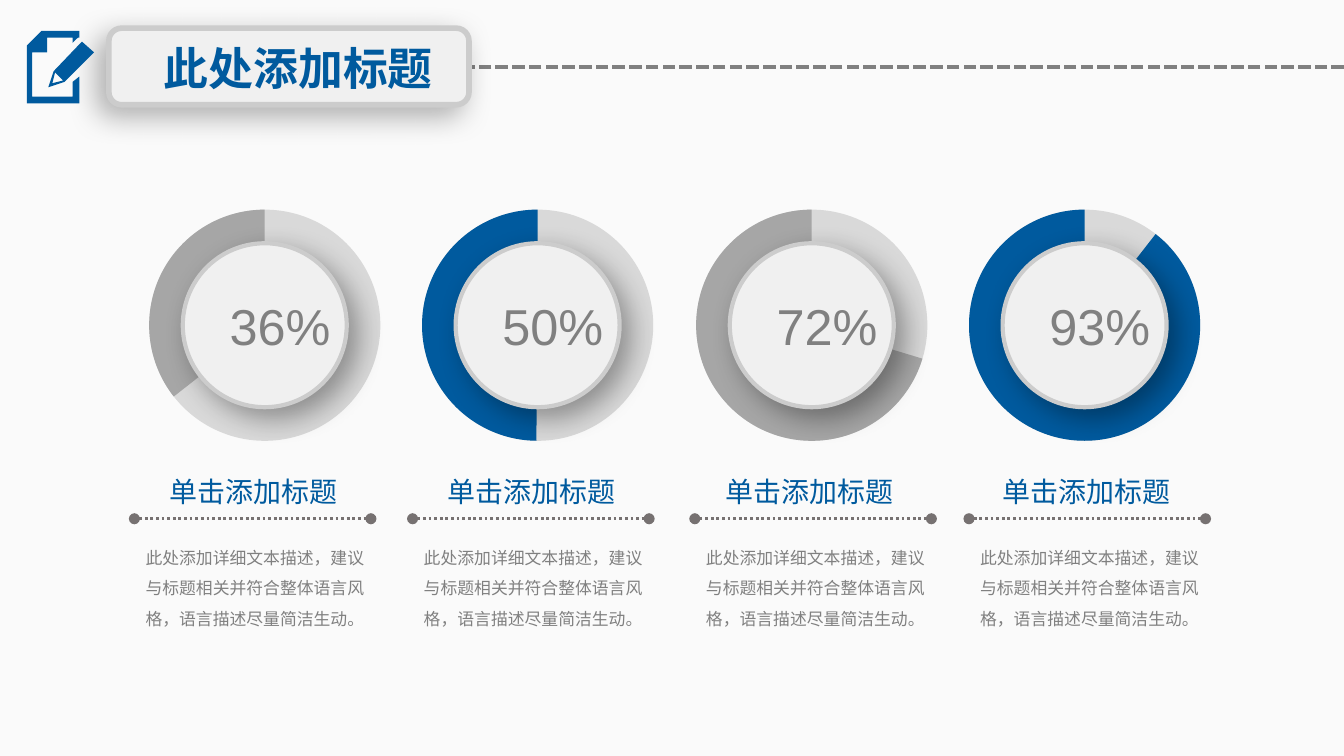
from lxml import etree
from pptx import Presentation
from pptx.dml.color import RGBColor
from pptx.enum.dml import MSO_LINE
from pptx.enum.shapes import MSO_CONNECTOR, MSO_SHAPE
from pptx.enum.text import MSO_ANCHOR, PP_ALIGN
from pptx.oxml import parse_xml
from pptx.oxml.ns import nsdecls, qn
from pptx.util import Inches, Pt

STRAIGHT = MSO_CONNECTOR.STRAIGHT
OVAL = MSO_SHAPE.OVAL
PIE = MSO_SHAPE.PIE
ROUNDED = MSO_SHAPE.ROUNDED_RECTANGLE
DASH, DOT = MSO_LINE.SQUARE_DOT, MSO_LINE.ROUND_DOT
LEFT, CENTER = PP_ALIGN.LEFT, PP_ALIGN.CENTER
TOP = MSO_ANCHOR.TOP

BLUE = RGBColor(0x00, 0x5A, 0x9E)
GRAY = RGBColor(0x80, 0x80, 0x80)
MID_GRAY = RGBColor(0xA6, 0xA6, 0xA6)
RING_GRAY = RGBColor(0xD9, 0xD9, 0xD9)
RULE_GRAY = RGBColor(0x76, 0x71, 0x71)
EDGE = RGBColor(0xCC, 0xCC, 0xCC)
PANEL = RGBColor(0xF0, 0xF0, 0xF0)
PAGE_TOP = RGBColor(0xFA, 0xFA, 0xFA)
PAGE_BOTTOM = RGBColor(0xFC, 0xFC, 0xFC)

DETAIL = "此处添加详细文本描述，建议与标题相关并符合整体语言风格，语言描述尽量简洁生动。"
ITEMS = [
    ("36%", 85.14, MID_GRAY, 1.11, 1.16, 1.0),
    ("50%", 54.38, BLUE, 3.14, 3.23, 3.07),
    ("72%", 10.09, MID_GRAY, 5.18, 5.3, 5.17),
    ("93%", 184.76, BLUE, 7.21, 7.36, 7.21),
]
SHEET = [
    [(54, 72), (24, 72), (24, 39), (35, 39), (35, 28), (54, 28), (54, 32), (58, 28), (59, 28),
     (59, 23), (31, 23), (20, 34), (20, 77), (59, 77), (59, 57), (54, 61)],
]
PENCIL = [
    [(40, 53), (36, 65), (48, 61), (70, 39), (61, 31)],
    [(47, 60), (39, 62), (41, 54)],
]


def add_filled(kind, left, top, width, height, color, edge=None, shadow=None):
    shape = page.shapes.add_shape(kind, Inches(left), Inches(top), Inches(width), Inches(height))
    shape.shadow.inherit = False
    shape.fill.solid()
    shape.fill.fore_color.rgb = color
    if edge:
        shape.line.color.rgb = EDGE
        shape.line.width = Pt(edge)
    else:
        shape.line.fill.background()
    if shadow:
        alpha, blur, angle = shadow
        effects = shape._element.spPr.find(qn("a:effectLst"))
        effects.append(parse_xml(
            f'<a:outerShdw {nsdecls("a")} blurRad="{Pt(blur)}" dist="{Pt(7)}" '
            f'dir="{angle * 60000}" algn="ctr" rotWithShape="0"><a:srgbClr val="000000">'
            f'<a:alpha val="{alpha * 1000}"/></a:srgbClr></a:outerShdw>'))
    return shape


def write(box, text, size, color, bold=False, wrap=False, align=LEFT):
    frame = box.text_frame
    frame.text = text
    frame.word_wrap = wrap
    frame.vertical_anchor = TOP
    para = frame.paragraphs[0]
    para.alignment = align
    font = para.runs[0].font
    font.name, font.size, font.bold = "Arial", Pt(size), bold
    font.color.rgb = color
    return para


deck = Presentation()
deck.slide_width = Inches(10)
deck.slide_height = Inches(10) * 9 // 16
page = deck.slides.add_slide(deck.slide_layouts[5])

backdrop = page.background.fill
backdrop.gradient()
backdrop.gradient_angle = 270
for stop, color in zip(backdrop.gradient_stops, (PAGE_TOP, PAGE_BOTTOM)):
    stop.color.rgb = color

header_rule = page.shapes.add_connector(
    STRAIGHT, Inches(10), Inches(0.5), Inches(3.19), Inches(0.5))
header_rule.line.color.rgb = GRAY
header_rule.line.width = Pt(2.25)
header_rule.line.dash_style = DASH
etree.SubElement(header_rule._element.spPr, qn("a:effectLst"))

panel = add_filled(ROUNDED, 0.81, 0.21, 2.68, 0.57, PANEL, 3, (30, 16, 135))
title = page.shapes.title
title.left, title.top, title.width, title.height = (
    Inches(1.12), Inches(0.25), Inches(2.22), Inches(0.5))
write(title, "此处添加标题", 24, BLUE, bold=True)
panel._element.addnext(title._element)

for contours in (SHEET, PENCIL):
    builder = page.shapes.build_freeform(*contours[0][0], scale=Inches(0.01))
    builder.add_line_segments(contours[0][1:])
    for contour in contours[1:]:
        builder.move_to(*contour[0])
        builder.add_line_segments(contour[1:])
    icon = builder.convert_to_shape()
    icon.shadow.inherit = False
    icon.fill.solid()
    icon.fill.fore_color.rgb = BLUE
    icon.line.fill.background()

for percent, start, color, ring_left, caption_left, rule_left in ITEMS:
    add_filled(OVAL, ring_left, 1.56, 1.72, 1.72, RING_GRAY)
    pie = add_filled(PIE, ring_left, 1.56, 1.72, 1.72, color)
    pie.adjustments[0] = start
    pie.adjustments[1] = 162
    add_filled(OVAL, ring_left + 0.25, 1.81, 1.22, 1.22, PANEL, 2.25, (35, 15, 45))
    value = page.shapes.add_textbox(
        Inches(ring_left + 0.5), Inches(2.15), Inches(0.96), Inches(0.56))
    write(value, percent, 27, GRAY)

    caption = page.shapes.add_textbox(
        Inches(caption_left), Inches(3.48), Inches(1.46), Inches(0.35))
    write(caption, "单击添加标题", 15, BLUE)

    detail = page.shapes.add_textbox(
        Inches(rule_left + 0.07), Inches(4), Inches(1.65), Inches(0.75))
    frame = detail.text_frame
    frame.margin_left = frame.margin_right = frame.margin_top = frame.margin_bottom = 0
    para = write(detail, DETAIL, 9, GRAY, wrap=True, align=CENTER)
    para.line_spacing = 1.5

    rule = page.shapes.add_connector(
        STRAIGHT, Inches(rule_left), Inches(3.86), Inches(rule_left + 1.76), Inches(3.86))
    rule.line.color.rgb = RULE_GRAY
    rule.line.width = Pt(1.5)
    rule.line.dash_style = DOT
    for end in ("a:headEnd", "a:tailEnd"):
        etree.SubElement(rule.line._get_or_add_ln(), qn(end), type="oval")
    etree.SubElement(rule._element.spPr, qn("a:effectLst"))

deck.save("out.pptx")
